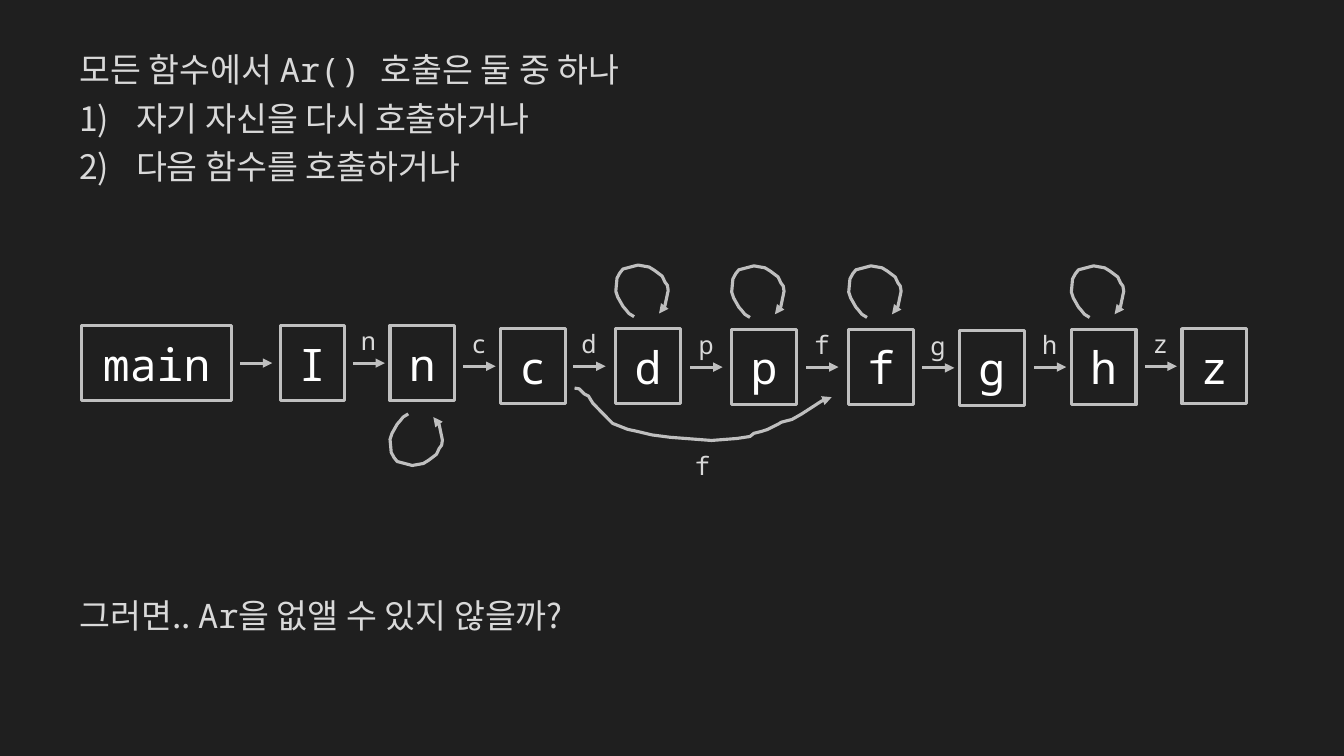
from lxml.etree import SubElement
from pptx import Presentation
from pptx.dml.color import RGBColor
from pptx.enum.shapes import MSO_CONNECTOR, MSO_SHAPE
from pptx.enum.text import MSO_ANCHOR, PP_ALIGN
from pptx.oxml.ns import qn
from pptx.util import Cm, Pt

SANS = "Noto Sans CJK KR"
MONO = "Noto Sans Mono"
BACK, EDGE, TEXT, NAME = "1F1F1F", "BFBFBF", "D9D9D9", "FFFFFF"

BOX_W, BOX_H = 1.63, 1.9
MAIN_X, MAIN_Y, MAIN_W = 2.06, 8.2, 3.78
STEP_W = 0.81

NODES = [
    ("I", 7.06, 8.2, 1.01),
    ("n", 9.83, 8.2, 0.94),
    ("c", 12.62, 8.28, 0.94),
    ("d", 15.52, 8.28, 1.07),
    ("p", 18.44, 8.3, 1.04),
    ("f", 21.39, 8.3, 1.07),
    ("g", 24.18, 8.32, 0.94),
    ("h", 27, 8.3, 0.94),
    ("z", 29.79, 8.28, 0.94),
]

LOOP_H = 1.32
LOOP = [
    (0.46, 1.3), (0.33, 1.22), (0.25, 1.12), (0.18, 1.04), (0.05, 0.81),
    (0, 0.66), (0.03, 0.33), (0.1, 0.2), (0.18, 0.1), (0.56, 0),
    (0.84, 0.05), (0.97, 0.13), (1.17, 0.28), (1.24, 0.43), (1.3, 0.51),
    (1.32, 0.64), (1.24, 1.02), (1.19, 1.12), (1.09, 1.22),
]

JUMP = [
    (14.48, 9.78), (14.6, 9.8), (14.73, 9.93), (14.83, 9.98),
    (14.94, 10.16), (15.34, 10.57), (15.44, 10.67), (15.82, 10.82),
    (16.05, 10.87), (16.43, 10.96), (16.89, 11.02), (17.93, 11.1),
    (18.57, 11.05), (18.9, 11), (19, 10.92), (19.2, 10.87),
    (19.35, 10.82), (19.61, 10.69), (19.69, 10.64), (19.96, 10.57),
    (20.19, 10.44), (20.47, 10.26), (20.7, 10.11), (20.96, 10.01),
]

RULES = [
    (False, [("모든 함수에서 ", SANS), ("Ar() ", MONO), ("호출은 둘 중 하나", SANS)]),
    (True, [("자기 자신을 다시 호출하거나", SANS)]),
    (True, [("다음 함수를 호출하거나", SANS)]),
]
QUERY = [
    (False, [("그러면.. ", SANS), ("Ar", MONO), ("을 없앨 수 있지 않을까?", SANS)]),
]


def color(code):
    return RGBColor.from_string(code)


class Board:
    def __init__(self, slide):
        self.slide = slide
        self.shapes = slide.shapes
        fill = slide.background.fill
        fill.solid()
        fill.fore_color.rgb = color(BACK)

    def stroke(self, shape, arrow=False):
        shape.line.color.rgb = color(EDGE)
        shape.line.width = Pt(2.25)
        if arrow:
            line = shape.line._get_or_add_ln()
            SubElement(line, qn("a:tailEnd"), type="triangle")

    def run(self, para, text, face, size, tint):
        run = para.add_run()
        run.text = text
        font = run.font
        font.name = face
        font.size = Pt(size)
        font.color.rgb = color(tint)
        SubElement(font._element, qn("a:ea"), typeface=face)

    def box(self, name, x, y, wide=BOX_W):
        shape = self.shapes.add_shape(
            MSO_SHAPE.RECTANGLE, Cm(x), Cm(y), Cm(wide), Cm(BOX_H))
        shape.shadow.inherit = False
        shape.fill.background()
        self.stroke(shape)
        frame = shape.text_frame
        frame.vertical_anchor = MSO_ANCHOR.MIDDLE
        para = frame.paragraphs[0]
        para.alignment = PP_ALIGN.CENTER
        self.run(para, name, MONO, 32, NAME)

    def arrow(self, x, y):
        link = self.shapes.add_connector(
            MSO_CONNECTOR.STRAIGHT, Cm(x), Cm(y), Cm(x + STEP_W), Cm(y))
        self.stroke(link, True)
        SubElement(link._element.spPr, qn("a:effectLst"))

    def frame(self, x, y, wide, high):
        area = self.shapes.add_textbox(Cm(x), Cm(y), Cm(wide), Cm(high))
        area.text_frame.word_wrap = True
        return area.text_frame

    def label(self, text, x, y):
        para = self.frame(x, y, 0.97, 1.02).paragraphs[0]
        para.alignment = PP_ALIGN.CENTER
        self.run(para, text, MONO, 18, TEXT)

    def curve(self, points):
        spots = [(Cm(x), Cm(y)) for x, y in points]
        path = self.shapes.build_freeform(*spots[0])
        path.add_line_segments(spots[1:], close=False)
        shape = path.convert_to_shape()
        shape.shadow.inherit = False
        shape.fill.background()
        self.stroke(shape, True)

    def loop(self, x, y, flip=False):
        self.curve([(x + dx, y + (LOOP_H - dy if flip else dy))
                    for dx, dy in LOOP])

    def note(self, y, high, lines):
        frame = self.frame(1.75, y, 21.26, high)
        for rank, (listed, parts) in enumerate(lines):
            para = frame.add_paragraph() if rank else frame.paragraphs[0]
            para.line_spacing = 1.2
            if listed:
                props = para._p.get_or_add_pPr()
                props.set("marL", str(Cm(1.43)))
                props.set("indent", str(Cm(-1.43)))
                SubElement(props, qn("a:buAutoNum"), type="arabicParenR")
            for text, face in parts:
                self.run(para, text, face, 24, TEXT)


def main():
    deck = Presentation()
    deck.slide_width, deck.slide_height = Cm(33.87), Cm(19.05)
    board = Board(deck.slides.add_slide(deck.slide_layouts[6]))
    board.note(0.91, 3.84, RULES)
    board.box("main", MAIN_X, MAIN_Y, MAIN_W)
    for name, x, y, gap in NODES:
        board.box(name, x, y)
        mid = y + BOX_H / 2
        board.arrow(x - gap, mid)
        if name != "I":
            board.label(name, x - gap - 0.09, mid - 1.08)
        if name in "dpfh":
            board.loop(x, y - 1.6)
        elif name == "n":
            board.loop(x, y + 2.21, flip=True)
    board.curve(JUMP)
    board.label("f", 17.22, 11.23)
    board.note(14.66, 1.4, QUERY)
    deck.save("out.pptx")


if __name__ == "__main__":
    main()
